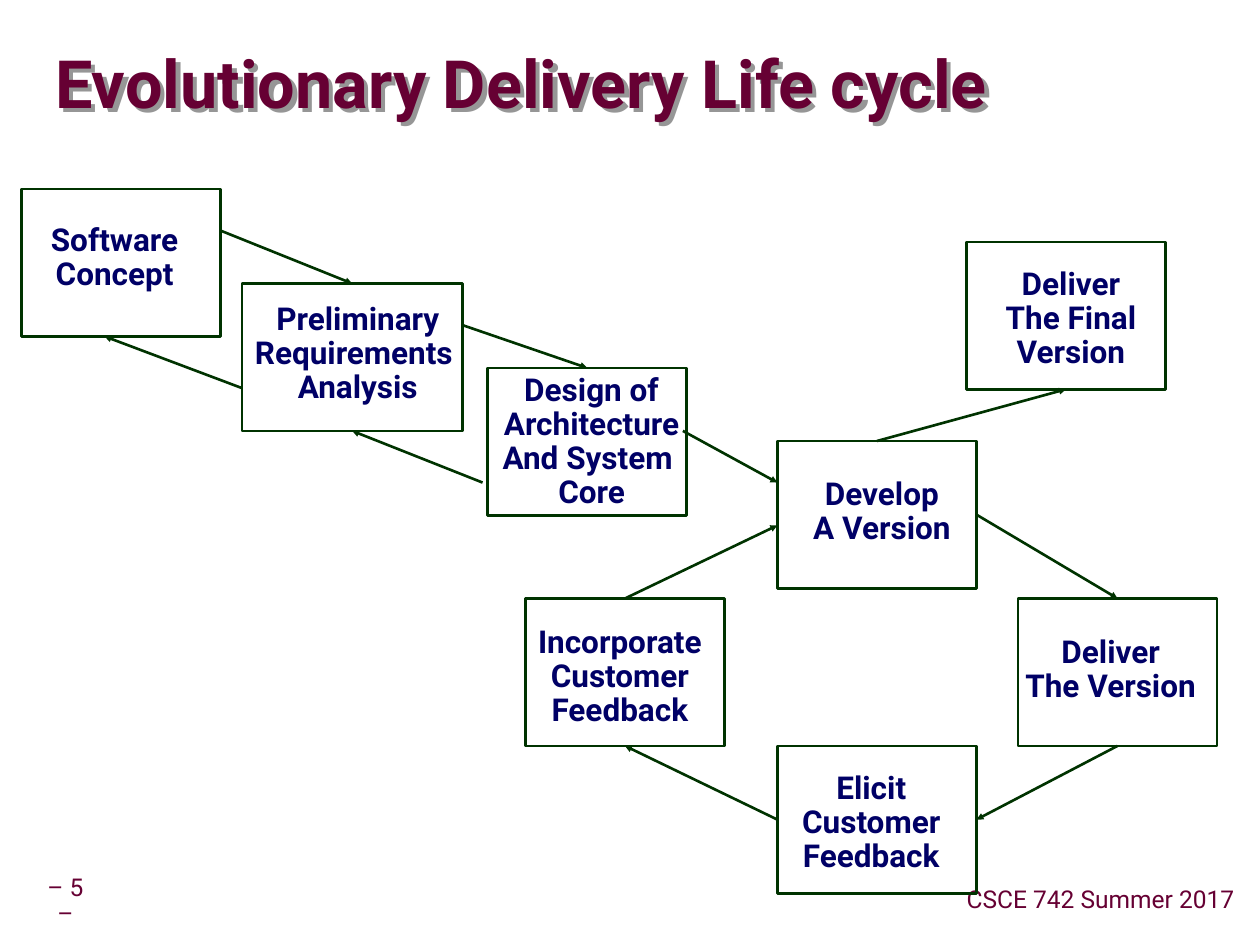
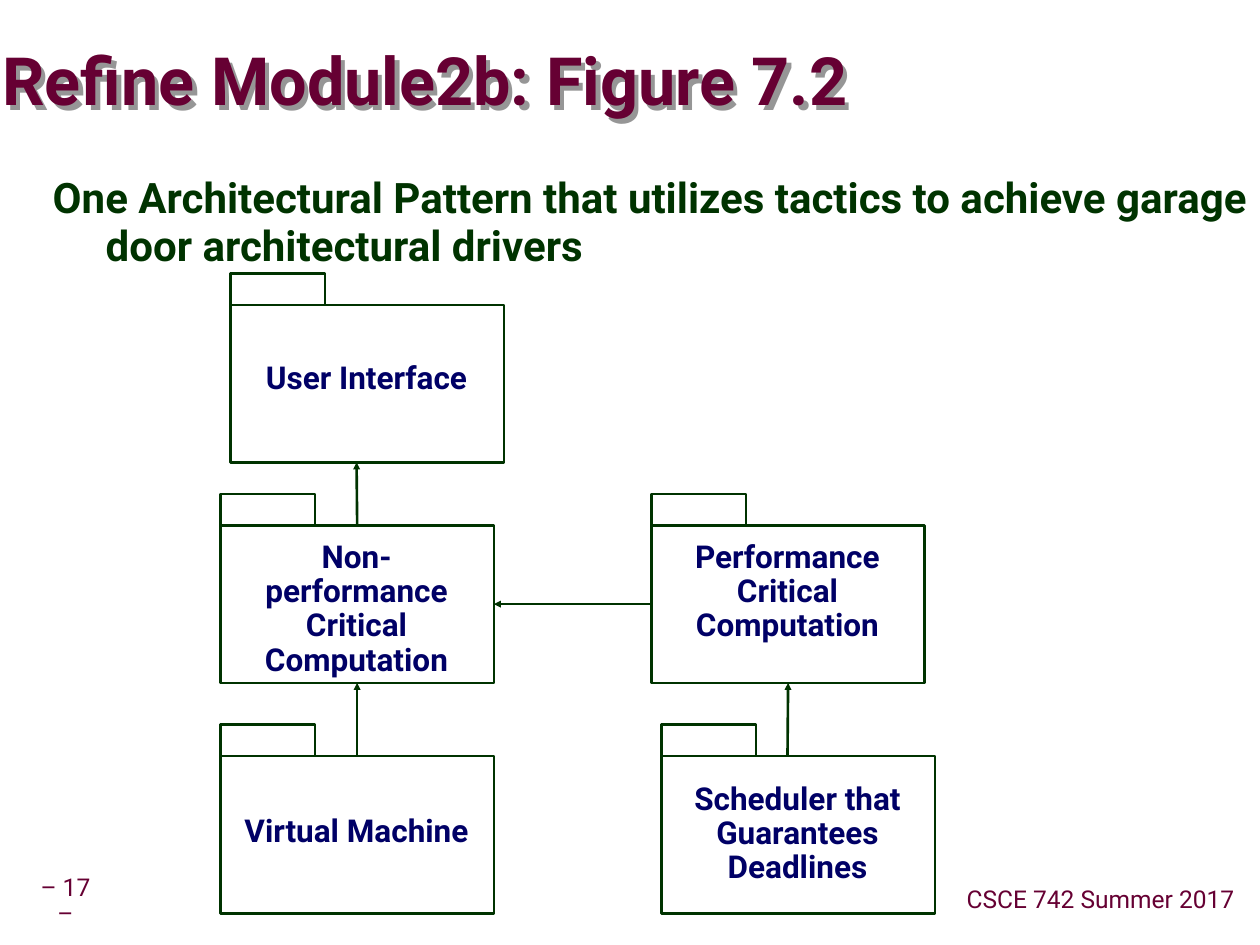
from dataclasses import dataclass
from lxml.etree import SubElement
from pptx import Presentation
from pptx.dml.color import RGBColor
from pptx.enum.shapes import MSO_CONNECTOR, MSO_SHAPE
from pptx.enum.text import MSO_ANCHOR, MSO_AUTO_SIZE, PP_ALIGN
from pptx.oxml.ns import qn
from pptx.util import Inches, Pt


@dataclass(frozen=True)
class Theme:
    font: str = "Roboto"
    maroon: str = "660033"
    navy: str = "000066"
    green: str = "003300"
    shadow: str = "969696"
    title_size: int = 38
    body_size: int = 24
    label_size: int = 18
    footer_size: int = 14
    line: float = 1.5


THEME = Theme()
COURSE = "CSCE 742 Summer 2017"

LIFE_CYCLE = {
    "number": "– 5 –",
    "title": ("Evolutionary Delivery Life cycle", (0.44, 0.27, 9.53, 0.85)),
    "steps": [
        ("Design of\nArchitecture\nAnd System \nCore", (3.87, 2.92), 1.58, (3.89, 2.92, 1.61)),
        ("Develop\nA Version", (6.17, 3.5), 1.58, (6.37, 3.75, 1.26)),
        ("Incorporate\nCustomer\nFeedback", (4.17, 4.75), 1.58, (4.18, 4.92, 1.48)),
        ("Deliver\nThe Version", (8.08, 4.75), 1.58, (8.05, 5, 1.53)),
        ("Elicit\nCustomer\nFeedback", (6.17, 5.92), 1.58, (6.28, 6.08, 1.27)),
        ("Preliminary\nRequirements \nAnalysis", (1.92, 2.25), 1.75, (1.92, 2.36, 1.84)),
        ("Software\nConcept", (0.17, 1.5), 1.58, (0.33, 1.73, 1.16)),
        ("Deliver\nThe Final\nVersion", (7.67, 1.92), 1.58, (7.9, 2.08, 1.2)),
    ],
    "arrows": [
        ((7.75, 4.08), (8.83, 4.75)),
        ((8.83, 5.92), (7.75, 6.5)),
        ((4.92, 4.75), (6.17, 4.17)),
        ((6.17, 6.5), (4.92, 5.92)),
        ((5.42, 3.42), (6.17, 3.83)),
        ((3.67, 2.58), (4.67, 2.92)),
        ((1.75, 1.83), (2.75, 2.25)),
        ((1.92, 3.08), (0.83, 2.67)),
        ((3.83, 3.83), (2.75, 3.42)),
        ((6.92, 3.5), (8.42, 3.08)),
    ],
}

PATTERN = {
    "number": "– 17 –",
    "title": ("Refine Module2b: Figure 7.2", (0.02, 0.25, 9.98, 0.85)),
    "body": "One Architectural Pattern that utilizes tactics to achieve garage door architectural drivers",
    "packages": [
        ("Non-performance Critical Computation", (1.75, 4.17), 0.08, 4),
        ("Virtual Machine", (1.75, 6), 0.42, 1),
        ("Performance Critical Computation", (5.17, 4.17), 0.08, 3),
        ("User Interface", (1.83, 2.42), 0.41, 1),
        ("Scheduler that Guarantees Deadlines", (5.25, 6), 0.17, 3),
    ],
    "arrows": [
        ((2.83, 4.17), (2.83, 3.67)),
        ((2.83, 6), (2.83, 5.42)),
        ((5.17, 4.75), (3.92, 4.75)),
        ((6.25, 6), (6.25, 5.42)),
    ],
}

STEP_HEIGHT = 1.17
PACKAGE = (2.17, 1.25)
TAB = (0.75, 0.25)
LABEL_INSET = 0.08
LABEL_WIDTH = 2
JOIN_REACH = 0.05


def add_text(slide, text, at, size, color, bold=True, spacing=0.9, align=PP_ALIGN.CENTER,
             insets=(0.05, 0.05, 0.05, 0.05), anchor=MSO_ANCHOR.TOP, wrap=True, grow=False):
    sp = slide.shapes.add_textbox(*map(Inches, at))
    tf = sp.text_frame
    tf.margin_left, tf.margin_top, tf.margin_right, tf.margin_bottom = map(Inches, insets)
    tf.vertical_anchor = anchor
    tf.word_wrap = wrap
    tf.auto_size = MSO_AUTO_SIZE.SHAPE_TO_FIT_TEXT if grow else MSO_AUTO_SIZE.NONE
    tf.text = text
    for p in tf.paragraphs:
        p.alignment = align
        p.line_spacing = spacing
        for r in p.runs:
            r.font.name = THEME.font
            r.font.size = Pt(size)
            r.font.bold = bold
            r.font.color.rgb = RGBColor.from_string(color)
    return sp


def add_label(slide, text, left, top, width, rows, wrap):
    add_text(slide, text, (left, top, width, 0.1 + 0.27 * rows),
             THEME.label_size, THEME.navy, wrap=wrap, grow=True)


def set_line(sp):
    sp.line.color.rgb = RGBColor.from_string(THEME.green)
    sp.line.width = Pt(THEME.line)


def add_box(slide, left, top, width, height):
    sp = slide.shapes.add_shape(MSO_SHAPE.RECTANGLE, *map(Inches, (left, top, width, height)))
    sp.shadow.inherit = False
    sp.fill.background()
    set_line(sp)
    return sp


def find_side(boxes, point):
    x, y = map(Inches, point)
    for sp in boxes:
        mid_x, mid_y = sp.left + sp.width // 2, sp.top + sp.height // 2
        sides = [(mid_x, sp.top), (sp.left, mid_y),
                 (mid_x, sp.top + sp.height), (sp.left + sp.width, mid_y)]
        for i, (side_x, side_y) in enumerate(sides):
            if max(abs(side_x - x), abs(side_y - y)) <= Inches(JOIN_REACH):
                return sp, i
    return None


def add_arrow(slide, boxes, start, end):
    cx = slide.shapes.add_connector(MSO_CONNECTOR.STRAIGHT, *map(Inches, start + end))
    set_line(cx)
    SubElement(cx.line._get_or_add_ln(), qn("a:tailEnd"), type="triangle", w="sm", len="sm")
    SubElement(cx._element.spPr, qn("a:effectLst"))
    for point, connect in ((start, cx.begin_connect), (end, cx.end_connect)):
        side = find_side(boxes, point)
        if side:
            connect(*side)


def add_frame(prs, content):
    slide = prs.slides.add_slide(prs.slide_layouts[6])
    add_text(slide, content["number"], (0.24, 7, 0.66, 0.31), THEME.footer_size, THEME.maroon,
             bold=False, insets=(0.05, 0.05, 0.15, 0.05), anchor=MSO_ANCHOR.MIDDLE)
    add_text(slide, COURSE, (7.58, 6.99, 2.31, 0.31), THEME.footer_size, THEME.maroon,
             bold=False, anchor=MSO_ANCHOR.MIDDLE, wrap=False)
    text, at = content["title"]
    sp = add_text(slide, text, at, THEME.title_size, THEME.maroon, spacing=0.87,
                  align=PP_ALIGN.LEFT, insets=(0, 0, 0, 0), anchor=MSO_ANCHOR.MIDDLE)
    effects = SubElement(sp._element.spPr, qn("a:effectLst"))
    shadow = SubElement(effects, qn("a:outerShdw"), dist=str(Inches(0.05)), dir="2700000")
    SubElement(shadow, qn("a:srgbClr"), val=THEME.shadow)
    return slide


def build_life_cycle(prs):
    slide = add_frame(prs, LIFE_CYCLE)
    boxes = []
    for text, corner, width, label in LIFE_CYCLE["steps"]:
        add_label(slide, text, *label, text.count("\n") + 1, wrap=False)
        boxes.append(add_box(slide, *corner, width, STEP_HEIGHT))
    for start, end in LIFE_CYCLE["arrows"]:
        add_arrow(slide, boxes, start, end)


def build_pattern(prs):
    slide = add_frame(prs, PATTERN)
    sp = add_text(slide, PATTERN["body"], (0.32, 1.34, 9.68, 0.91), THEME.body_size, THEME.green,
                  spacing=0.95, align=PP_ALIGN.LEFT, insets=(0.1, 0.05, 0.1, 0.05))
    pPr = sp.text_frame.paragraphs[0]._p.get_or_add_pPr()
    pPr.set("marL", str(Inches(0.42)))
    pPr.set("indent", str(-Inches(0.42)))
    boxes = []
    for text, (left, top), drop, rows in PATTERN["packages"]:
        add_label(slide, text, left + LABEL_INSET, top + drop, LABEL_WIDTH, rows, wrap=True)
        boxes.append(add_box(slide, left, top, *PACKAGE))
        add_box(slide, left, top - TAB[1], *TAB)
    for start, end in PATTERN["arrows"]:
        add_arrow(slide, boxes, start, end)


def main():
    prs = Presentation()
    prs.slide_width, prs.slide_height = Inches(10), Inches(7.5)
    build_life_cycle(prs)
    build_pattern(prs)
    prs.save("out.pptx")


if __name__ == "__main__":
    main()
